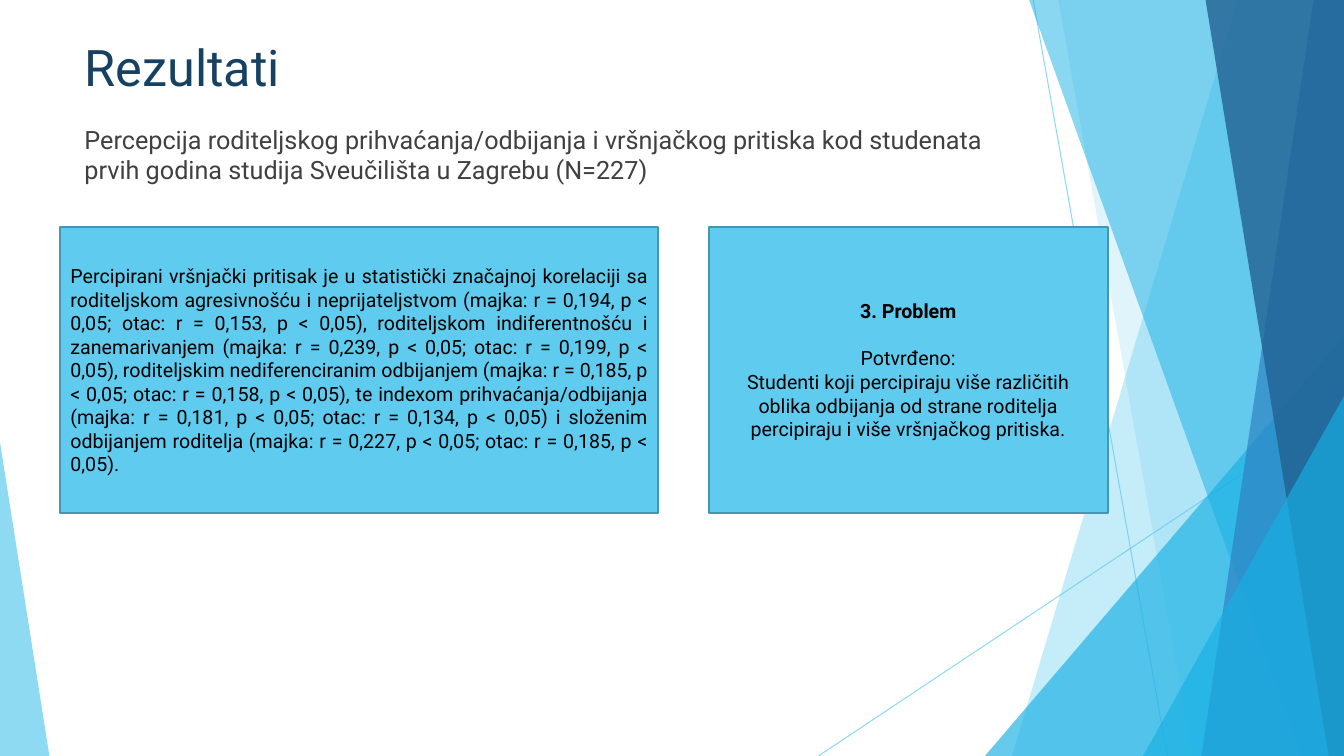
from lxml import etree
from pptx import Presentation
from pptx.dml.color import RGBColor
from pptx.enum.shapes import MSO_CONNECTOR, MSO_SHAPE
from pptx.enum.text import MSO_ANCHOR, MSO_AUTO_SIZE, PP_ALIGN
from pptx.oxml.ns import qn
from pptx.util import Pt

STRAIGHT = MSO_CONNECTOR.STRAIGHT
RECT, TRIANGLE = MSO_SHAPE.RECTANGLE, MSO_SHAPE.ISOSCELES_TRIANGLE
TOP, MIDDLE = MSO_ANCHOR.TOP, MSO_ANCHOR.MIDDLE
LEFT, CENTER, JUSTIFY = PP_ALIGN.LEFT, PP_ALIGN.CENTER, PP_ALIGN.JUSTIFY
NO_FIT = MSO_AUTO_SIZE.NONE

FONT = "Roboto"
WIDTH, HEIGHT = 960, 540
COLORS = {
    "sky": "5FCBEF", "cyan": "17B0E4", "blue": "2E83C3", "navy": "226292",
    "title": "174162", "body": "404040", "border": "4696B1", "text": "000000",
}

SUBTITLE = ("Percepcija roditeljskog prihvaćanja/odbijanja i vršnjačkog pritiska kod "
            "studenata prvih godina studija Sveučilišta u Zagrebu (N=227)")
CORRELATIONS = (
    "Percipirani vršnjački pritisak je u statistički značajnoj korelaciji sa roditeljskom "
    "agresivnošću i neprijateljstvom (majka: r = 0,194, p < 0,05; otac: r = 0,153, p < 0,05), "
    "roditeljskom indiferentnošću i zanemarivanjem (majka: r = 0,239, p < 0,05; otac: "
    "r = 0,199, p < 0,05), roditeljskim nediferenciranim odbijanjem (majka: r = 0,185, "
    "p < 0,05; otac: r = 0,158, p < 0,05), te indexom prihvaćanja/odbijanja (majka: "
    "r = 0,181, p < 0,05; otac: r = 0,134, p < 0,05) i složenim odbijanjem roditelja "
    "(majka: r = 0,227, p < 0,05; otac: r = 0,185, p < 0,05).")
CONCLUSION = ("Studenti koji percipiraju više različitih oblika odbijanja od strane roditelja "
              "percipiraju i više vršnjačkog pritiska.")


def rgb(name):
    return RGBColor.from_string(COLORS[name])


def paint(fill, color, alpha=100):
    """Solid fill with an opacity in percent."""
    fill.solid()
    fill.fore_color.rgb = rgb(color)
    if alpha < 100:
        for clr in fill._xPr.iter(qn("a:srgbClr")):
            etree.SubElement(clr, qn("a:alpha"), val=str(alpha * 1000))


def add_line(s, x1, y1, x2, y2):
    cn = s.shapes.add_connector(STRAIGHT, Pt(x1), Pt(y1), Pt(x2), Pt(y2))
    cn.line.width = Pt(0.75)
    paint(cn.line.fill, "sky", 70)
    etree.SubElement(cn._element.spPr, qn("a:effectLst"))


def finish_facet(sp, color, alpha):
    sp.shadow.inherit = False
    sp.line.fill.background()
    paint(sp.fill, color, alpha)


def add_band(s, top_x, bottom_x, color, alpha):
    """Full-height band from a slanted left edge to the right slide edge."""
    fb = s.shapes.build_freeform(Pt(top_x), 0)
    fb.add_line_segments([(Pt(WIDTH), 0), (Pt(WIDTH), Pt(HEIGHT)), (Pt(bottom_x), Pt(HEIGHT))])
    finish_facet(fb.convert_to_shape(), color, alpha)


def add_corner(s, x, w, h, apex, color, alpha):
    """Triangle standing on the bottom slide edge."""
    sp = s.shapes.add_shape(TRIANGLE, Pt(x), Pt(HEIGHT - h), Pt(w), Pt(h))
    sp.adjustments[0] = apex
    finish_facet(sp, color, alpha)


def write(sp, texts, size, color, align=LEFT, anchor=TOP):
    tf = sp.text_frame
    tf.word_wrap = True
    tf.auto_size = NO_FIT
    tf.vertical_anchor = anchor
    for i, text in enumerate(texts):
        p = tf.add_paragraph() if i else tf.paragraphs[0]
        p.text = text
        p.alignment = align
        p.font.name, p.font.size = FONT, Pt(size)
        p.font.color.rgb = rgb(color)
    return tf.paragraphs


def add_box(s, x, w, texts, align):
    sp = s.shapes.add_shape(RECT, Pt(x), Pt(162), Pt(w), Pt(204.5))
    sp.shadow.inherit = False
    paint(sp.fill, "sky")
    paint(sp.line.fill, "border")
    sp.line.width = Pt(1.5)
    return write(sp, texts, 14, "text", align, MIDDLE)


def main():
    prs = Presentation()
    prs.slide_width, prs.slide_height = Pt(WIDTH), Pt(HEIGHT)
    s = prs.slides.add_slide(prs.slide_layouts[5])

    # Faceted background
    add_line(s, 738, 0, 833.8, HEIGHT)
    add_line(s, WIDTH, 290.2, 584.6, HEIGHT)
    add_band(s, 884.2, 722.9, "sky", 36)
    add_band(s, 756, 851.8, "sky", 20)
    add_corner(s, 703.5, 256.5, 300, 1, "cyan", 66)
    add_band(s, 735.1, 929.5, "cyan", 50)
    add_band(s, 938.2, 858.2, "blue", 70)
    add_band(s, 861.1, 949, "navy", 80)
    add_corner(s, 816.5, 143.5, 257, 1, "cyan", 66)
    add_corner(s, 0, 35.3, 224, 0, "sky", 70)

    # Title and subtitle
    title = s.shapes.title
    title.left, title.top, title.width, title.height = Pt(53.3), Pt(18.7), Pt(676.8), Pt(56.9)
    write(title, ["Rezultati"], 36, "title", anchor=MIDDLE)
    subtitle = s.shapes.add_textbox(Pt(53.3), Pt(85), Pt(676.8), Pt(418.3))
    write(subtitle, [SUBTITLE], 18, "body")[0].space_before = Pt(10)

    # Result boxes
    add_box(s, 43.2, 427, [CORRELATIONS], JUSTIFY)
    lines = add_box(s, 506.2, 285.1, ["3. Problem", "Potvrđeno:", CONCLUSION], CENTER)
    lines[0].font.bold = True
    lines[1].space_before = Pt(16.8)

    prs.save("out.pptx")


if __name__ == "__main__":
    main()
